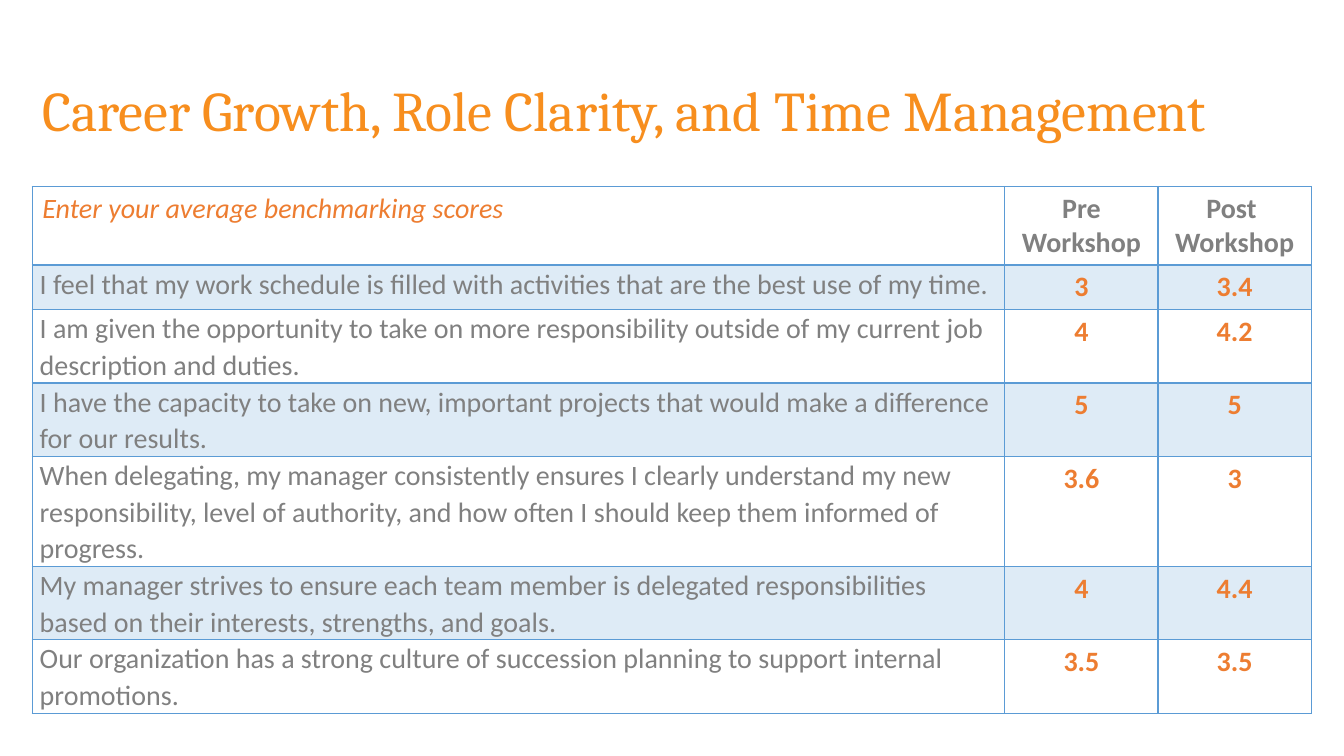
from pptx import Presentation
from pptx.dml.color import RGBColor
from pptx.enum.text import MSO_ANCHOR, PP_ALIGN
from pptx.oxml import parse_xml
from pptx.oxml.ns import nsdecls, qn
from pptx.util import Pt

TITLE = "Career Growth, Role Clarity, and Time Management"
HEADERS = ("Enter your average benchmarking scores", "Pre Workshop", "Post \nWorkshop")
SCORES = [
    ("I feel that my work schedule is filled with activities that are the best use of my time.", "3", "3.4"),
    ("I am given the opportunity to take on more responsibility outside of my current job "
     "description and duties.", "4", "4.2"),
    ("I have the capacity to take on new, important projects that would make a difference "
     "for our results.", "5", "5"),
    ("When delegating, my manager consistently ensures I clearly understand my new responsibility, "
     "level of authority, and how often I should keep them informed of progress.", "3.6", "3"),
    ("My manager strives to ensure each team member is delegated responsibilities based on their "
     "interests, strengths, and goals.", "4", "4.4"),
    ("Our organization has a strong culture of succession planning to support internal promotions.",
     "3.5", "3.5"),
]
THEME = {
    "title_font": "Cambria", "title_size": 40, "title": "F78E1E",
    "body_font": "Calibri", "body_size": 20, "text": "808080",
    "accent": "ED7D31", "blue": "5B9BD5", "band_alpha": 20000,
}
LEFT, TABLE_TOP = 23, 133.2
COLUMN_WIDTHS = (694.8, 109.4, 109.4)
HEADER_HEIGHT = 56
LINE_COUNTS = (1, 2, 2, 3, 2, 2)
LINE_HEIGHT, MIN_ROW_HEIGHT = 26.1, 31.4


def write(frame, text, font=THEME["body_font"], size=THEME["body_size"], color=THEME["text"],
          bold=False, italic=False, align=PP_ALIGN.LEFT, spacing=None):
    frame.text = text
    for para in frame.paragraphs:
        para.alignment = align
        para.line_spacing = spacing
        for span in para.runs:
            span.font.name = font
            span.font.size = Pt(size)
            span.font.bold = bold
            span.font.italic = italic
            span.font.color.rgb = RGBColor.from_string(color)


def add_borders(cell, bottom_width):
    properties = cell._tc.get_or_add_tcPr()
    for side, width in (("L", 1), ("R", 1), ("T", 1), ("B", bottom_width)):
        properties.append(parse_xml(
            f'<a:ln{side} {nsdecls("a")} w="{Pt(width)}"><a:solidFill>'
            f'<a:srgbClr val="{THEME["blue"]}"/></a:solidFill></a:ln{side}>'))


def fill_cell(cell, banded):
    if not banded:
        cell.fill.background()
        return
    cell.fill.solid()
    cell.fill.fore_color.rgb = RGBColor.from_string(THEME["blue"])
    color = cell._tc.tcPr.find(qn("a:solidFill")).find(qn("a:srgbClr"))
    color.append(parse_xml(f'<a:alpha {nsdecls("a")} val="{THEME["band_alpha"]}"/>'))


def add_title(page):
    title = page.shapes.title
    title.left, title.top, title.width, title.height = Pt(LEFT), Pt(28.8), Pt(870.5), Pt(104.4)
    title.text_frame.vertical_anchor = MSO_ANCHOR.MIDDLE
    title.text_frame.word_wrap = True
    write(title.text_frame, TITLE, font=THEME["title_font"], size=THEME["title_size"],
          color=THEME["title"], spacing=0.9)


def add_score_table(page):
    heights = [HEADER_HEIGHT] + [max(MIN_ROW_HEIGHT, count * LINE_HEIGHT) for count in LINE_COUNTS]
    rows = [HEADERS] + SCORES
    table = page.shapes.add_table(len(rows), len(HEADERS), Pt(LEFT), Pt(TABLE_TOP),
                                  Pt(sum(COLUMN_WIDTHS)), Pt(sum(heights))).table
    table.first_row = False
    table.horz_banding = False
    for column, width in zip(table.columns, COLUMN_WIDTHS):
        column.width = Pt(width)
    for row_index, (values, height) in enumerate(zip(rows, heights)):
        table.rows[row_index].height = Pt(height)
        is_header = row_index == 0
        for column_index, value in enumerate(values):
            cell = table.cell(row_index, column_index)
            add_borders(cell, 2 if is_header else 1)
            fill_cell(cell, row_index % 2 == 1)
            if column_index:
                write(cell.text_frame, value, bold=True, align=PP_ALIGN.CENTER,
                      color=THEME["text" if is_header else "accent"])
            elif is_header:
                write(cell.text_frame, value, italic=True, color=THEME["accent"])
            else:
                cell.margin_left = cell.margin_right = Pt(5.4)
                cell.margin_top = cell.margin_bottom = Pt(0)
                write(cell.text_frame, value, spacing=1.07)


def main():
    deck = Presentation()
    deck.slide_width, deck.slide_height = Pt(960), Pt(540)
    page = deck.slides.add_slide(deck.slide_layouts[5])
    add_title(page)
    add_score_table(page)
    deck.save("out.pptx")


if __name__ == "__main__":
    main()
